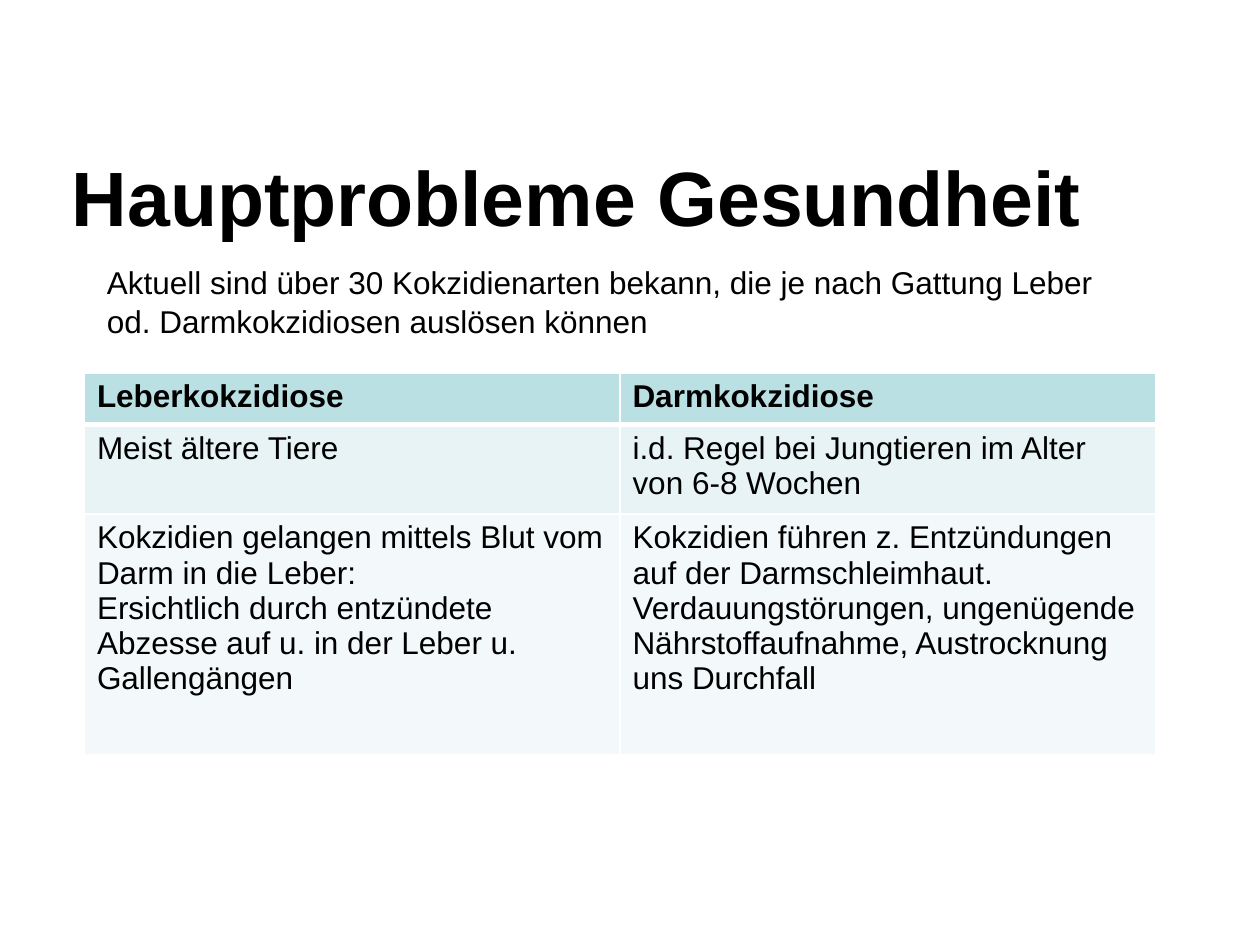
from dataclasses import dataclass

from pptx import Presentation
from pptx import util as u
from pptx.dml.color import RGBColor
from pptx.enum import text
from pptx.oxml import parse_xml
from pptx.oxml.ns import nsdecls


@dataclass(frozen=True)
class Theme:
    font: str = "Arial"
    ink: str = "000000"
    line: str = "FFFFFF"
    fills: tuple = ("BBE0E3", "E7F3F4", "F3F9FA")
    head: int = 44
    body: int = 18


theme = Theme()


def write(frame, words, size=theme.body, bold=False, space=None):
    """Fill a text frame, one paragraph per line of words."""
    frame.word_wrap = True
    frame.text = words
    for par in frame.paragraphs:
        par.alignment = text.PP_ALIGN.LEFT
        par.line_spacing = space
        font = par.font
        font.name, font.size, font.bold = theme.font, u.Pt(size), bold
        font.color.rgb = RGBColor.from_string(theme.ink)


def border(cell, **widths):
    """Draw cell edges; keys are L, R, T, B and values are points."""
    props = cell._tc.get_or_add_tcPr()
    for at, (side, width) in enumerate(widths.items()):
        props.insert(at, parse_xml(
            f'<a:ln{side} {nsdecls("a")} w="{u.Pt(width)}"><a:solidFill>'
            f'<a:srgbClr val="{theme.line}"/></a:solidFill></a:ln{side}>'))


deck = Presentation()
deck.slide_width, deck.slide_height = u.Inches(10), u.Inches(7.5)
slide = deck.slides.add_slide(deck.slide_layouts[5])

title = slide.shapes.title
title.left, title.top = u.Inches(0.47), u.Inches(0.85)
title.width, title.height = u.Inches(9.07), u.Inches(1.4)
write(title.text_frame, "Hauptprobleme Gesundheit", size=theme.head, bold=True)
title.text_frame.vertical_anchor = text.MSO_ANCHOR.MIDDLE

intro = slide.shapes.add_textbox(
    u.Inches(0.75), u.Inches(2.02), u.Inches(8.19), u.Inches(0.71))
write(intro.text_frame,
      "Aktuell sind über 30 Kokzidienarten bekann, die je nach Gattung Leber "
      "od. Darmkokzidiosen auslösen können", space=1.05)

rows = [
    (0.41, "Leberkokzidiose", "Darmkokzidiose"),
    (0.71, "Meist ältere Tiere",
     "i.d. Regel bei Jungtieren im Alter von 6-8 Wochen"),
    (1.91, "Kokzidien gelangen mittels Blut vom Darm in die Leber:\n"
     "Ersichtlich durch entzündete Abzesse auf u. in der Leber u. Gallengängen",
     "Kokzidien führen z. Entzündungen auf der Darmschleimhaut.\n"
     "Verdauungstörungen, ungenügende Nährstoffaufnahme, Austrocknung "
     "uns Durchfall"),
]
table = slide.shapes.add_table(
    len(rows), 2, u.Inches(0.67), u.Inches(2.96),
    u.Inches(8.5), u.Inches(3.03)).table
for r, (height, *cells) in enumerate(rows):
    table.rows[r].height = u.Inches(height)
    for c, words in enumerate(cells):
        cell = table.cell(r, c)
        write(cell.text_frame, words, bold=r == 0)
        cell.fill.solid()
        cell.fill.fore_color.rgb = RGBColor.from_string(theme.fills[r])
        border(cell, L=1, R=1, T=3 if r == 1 else 1, B=3 if r == 0 else 1)

deck.save("out.pptx")
